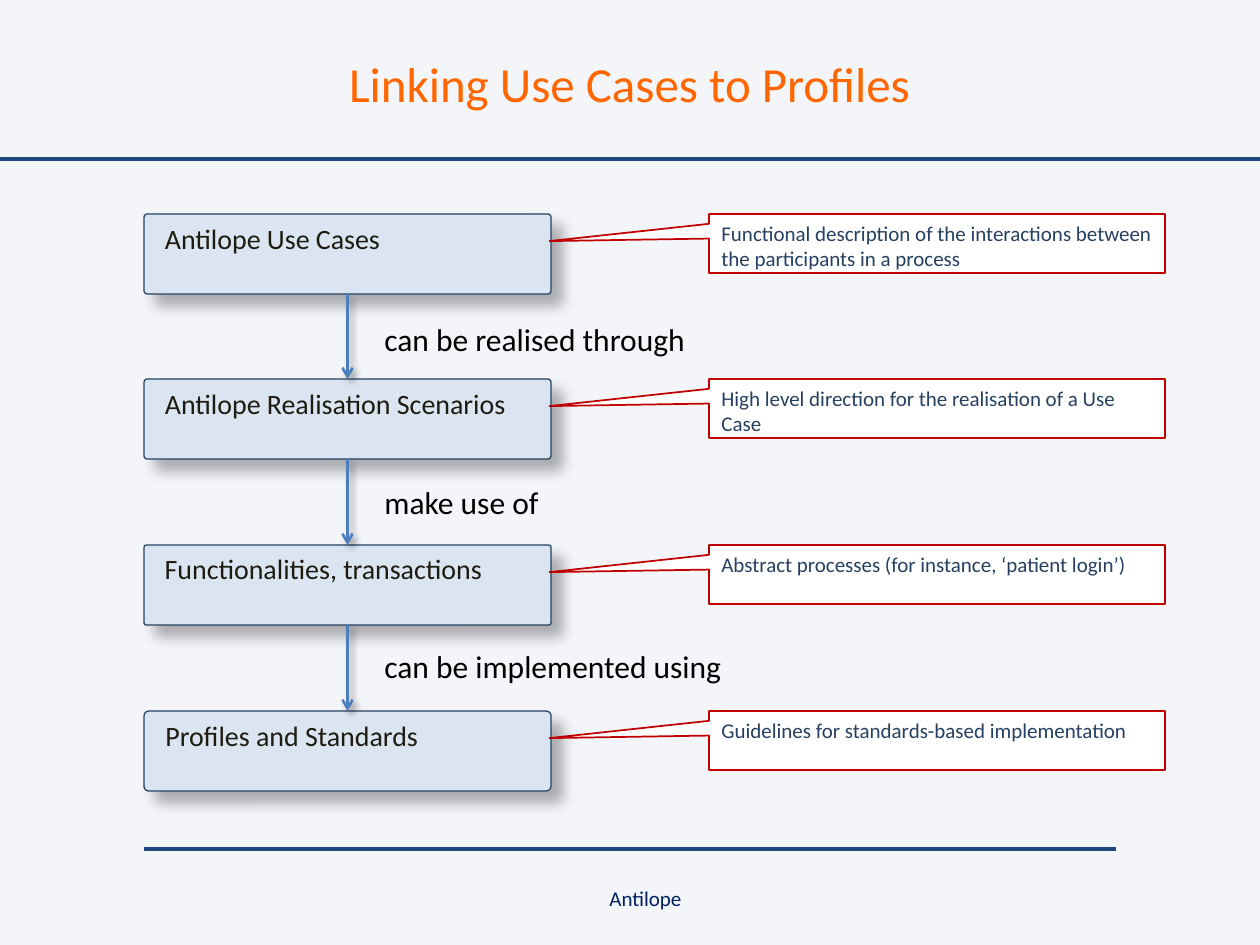
from dataclasses import dataclass

from lxml.etree import SubElement
from pptx import Presentation
from pptx.dml.color import RGBColor
from pptx.enum.shapes import MSO_CONNECTOR, MSO_SHAPE
from pptx.enum.text import MSO_ANCHOR, MSO_AUTO_SIZE, PP_ALIGN
from pptx.oxml.ns import qn
from pptx.shapes.autoshape import Shape
from pptx.shapes.connector import Connector
from pptx.slide import Slide
from pptx.util import Emu, Pt

PIXELS_PER_INCH = 126
FONT = "Calibri"
BACKGROUND = RGBColor(0xF3, 0xF5, 0xF9)
RULE_BLUE = RGBColor(0x1F, 0x49, 0x7D)
ARROW_BLUE = RGBColor(0x4B, 0x7E, 0xBC)
BOX_FILL = RGBColor(0xDB, 0xE5, 0xF1)
DARK_BLUE = RGBColor(0x25, 0x40, 0x61)
BOX_TEXT = RGBColor(0x1E, 0x1C, 0x11)
FOOTER_BLUE = RGBColor(0x00, 0x20, 0x60)
ORANGE = RGBColor(0xFF, 0x66, 0x00)
RED = RGBColor(0xC0, 0x00, 0x00)
WHITE = RGBColor(0xFF, 0xFF, 0xFF)
BLACK = RGBColor(0x00, 0x00, 0x00)

BOX_LEFT, BOX_WIDTH, BOX_HEIGHT = 144, 407, 80
FIRST_TOP, LAST_TOP = 214, 711
CALLOUT_LEFT, CALLOUT_WIDTH, CALLOUT_HEIGHT = 709, 456, 59
LABEL_LEFT, LABEL_HEIGHT = 372, 50
FIRST_LABEL_TOP, LAST_LABEL_TOP = 314, 641


@dataclass(frozen=True)
class Step:
    name: str
    explanation: str
    corner: float


@dataclass(frozen=True)
class LinkLabel:
    text: str
    width: int


@dataclass(frozen=True)
class Area:
    left: int
    top: int
    width: int
    height: int


@dataclass(frozen=True)
class Shadow:
    opacity: int
    blur: int
    distance: int


STEPS = [
    Step("Antilope Use Cases",
         "Functional description of the interactions between the participants in a process", 0.04),
    Step("Antilope Realisation Scenarios",
         "High level direction for the realisation of a Use Case", 0.04),
    Step("Functionalities, transactions",
         "Abstract processes (for instance, ‘patient login’)", 0.03),
    Step("Profiles and Standards", "Guidelines for standards-based implementation", 0.06),
]
LINK_LABELS = [
    LinkLabel("can be realised through", 338),
    LinkLabel("make use of", 181),
    LinkLabel("can be implemented using", 367),
]
BOX_SHADOW = Shadow(opacity=30, blur=8, distance=9)
ARROW_SHADOW = Shadow(opacity=40, blur=4, distance=3)


def px(length: int) -> Emu:
    return Emu(round(length * 914400 / PIXELS_PER_INCH))


def spread(first: int, last: int, count: int) -> list[int]:
    return [first + index * (last - first) // (count - 1) for index in range(count)]


def add_shadow(effects, shadow: Shadow) -> None:
    outer = SubElement(effects, qn("a:outerShdw"), blurRad=str(Pt(shadow.blur)),
                       dist=str(Pt(shadow.distance)), dir="2700000", algn="tl", rotWithShape="0")
    color = SubElement(outer, qn("a:srgbClr"), val=str(BLACK))
    SubElement(color, qn("a:alpha"), val=str(shadow.opacity * 1000))


def write(shape: Shape, text: str, size: int, color: RGBColor,
          alignment: PP_ALIGN = PP_ALIGN.LEFT, anchor: MSO_ANCHOR = MSO_ANCHOR.TOP) -> None:
    frame = shape.text_frame
    frame.word_wrap = True
    frame.vertical_anchor = anchor
    paragraph = frame.paragraphs[0]
    paragraph.text = text
    paragraph.alignment = alignment
    paragraph.font.name = FONT
    paragraph.font.size = Pt(size)
    paragraph.font.color.rgb = color


def add_text(slide: Slide, area: Area, text: str, size: int, color: RGBColor,
             alignment: PP_ALIGN = PP_ALIGN.LEFT,
             anchor: MSO_ANCHOR = MSO_ANCHOR.TOP) -> Shape:
    shape = slide.shapes.add_textbox(px(area.left), px(area.top), px(area.width), px(area.height))
    write(shape, text, size, color, alignment, anchor)
    return shape


def add_panel(slide: Slide, kind: MSO_SHAPE, area: Area, fill: RGBColor,
              line: RGBColor, line_width: float) -> Shape:
    shape = slide.shapes.add_shape(kind, px(area.left), px(area.top),
                                   px(area.width), px(area.height))
    shape.shadow.inherit = False
    shape.fill.solid()
    shape.fill.fore_color.rgb = fill
    shape.line.color.rgb = line
    shape.line.width = Pt(line_width)
    return shape


def add_box(slide: Slide, step: Step, top: int) -> Shape:
    area = Area(BOX_LEFT, top, BOX_WIDTH, BOX_HEIGHT)
    shape = add_panel(slide, MSO_SHAPE.ROUNDED_RECTANGLE, area, BOX_FILL, DARK_BLUE, 0.75)
    shape.adjustments[0] = step.corner
    add_shadow(shape._element.spPr.find(qn("a:effectLst")), BOX_SHADOW)
    shape.text_frame.margin_left = px(20)
    write(shape, step.name, 16, BOX_TEXT)
    return shape


def add_callout(slide: Slide, step: Step, top: int) -> None:
    area = Area(CALLOUT_LEFT, top, CALLOUT_WIDTH, CALLOUT_HEIGHT)
    shape = add_panel(slide, MSO_SHAPE.RECTANGULAR_CALLOUT, area, WHITE, RED, 1)
    shape.adjustments[0] = -0.85
    shape.adjustments[1] = -0.04
    write(shape, step.explanation, 12, DARK_BLUE)


def add_label(slide: Slide, label: LinkLabel, top: int) -> None:
    area = Area(LABEL_LEFT, top, label.width, LABEL_HEIGHT)
    shape = add_text(slide, area, label.text, 18, BLACK)
    shape.text_frame.word_wrap = False
    shape.text_frame.auto_size = MSO_AUTO_SIZE.SHAPE_TO_FIT_TEXT


def add_line(slide: Slide, start: int, end: int, y: int, color: RGBColor,
             width: float) -> Connector:
    connector = slide.shapes.add_connector(MSO_CONNECTOR.STRAIGHT,
                                           px(start), px(y), px(end), px(y))
    connector.line.color.rgb = color
    connector.line.width = Pt(width)
    SubElement(connector._element.spPr, qn("a:effectLst"))
    return connector


def add_arrow(slide: Slide, upper: Shape, lower: Shape) -> None:
    connector = add_line(slide, BOX_LEFT, BOX_LEFT, FIRST_TOP, ARROW_BLUE, 1.5)
    connector.begin_connect(upper, 2)
    connector.end_connect(lower, 0)
    properties = connector._element.spPr
    SubElement(properties.find(qn("a:ln")), qn("a:tailEnd"), type="arrow")
    add_shadow(properties.find(qn("a:effectLst")), ARROW_SHADOW)


def main() -> None:
    presentation = Presentation()
    presentation.slide_width = px(1260)
    presentation.slide_height = px(945)
    slide = presentation.slides.add_slide(presentation.slide_layouts[6])
    slide.background.fill.solid()
    slide.background.fill.fore_color.rgb = BACKGROUND

    add_line(slide, 0, 1260, 159, RULE_BLUE, 2.25)
    add_line(slide, 144, 1116, 849, RULE_BLUE, 2.25)
    add_text(slide, Area(297, 33, 665, 100), "Linking Use Cases to Profiles", 28, ORANGE,
             PP_ALIGN.CENTER, MSO_ANCHOR.MIDDLE)
    add_text(slide, Area(333, 879, 625, 50), "Antilope", 12, FOOTER_BLUE, PP_ALIGN.CENTER)

    tops = spread(FIRST_TOP, LAST_TOP, len(STEPS))
    boxes = [add_box(slide, step, top) for step, top in zip(STEPS, tops)]
    for upper, lower in zip(boxes, boxes[1:]):
        add_arrow(slide, upper, lower)
    for step, top in zip(STEPS, tops):
        add_callout(slide, step, top)
    label_tops = spread(FIRST_LABEL_TOP, LAST_LABEL_TOP, len(LINK_LABELS))
    for label, top in zip(LINK_LABELS, label_tops):
        add_label(slide, label, top)

    presentation.save("out.pptx")


if __name__ == "__main__":
    main()
